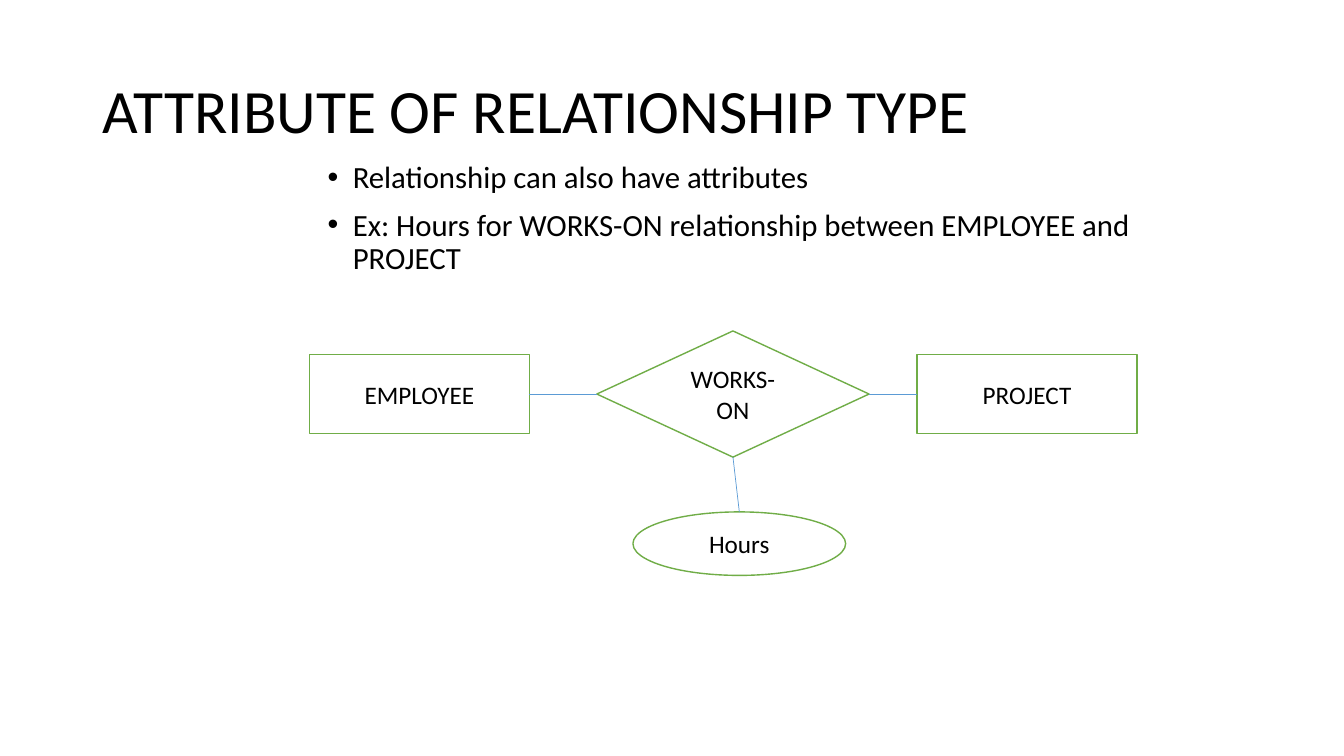
import pptx
import pptx.dml.color
import pptx.enum.shapes
import pptx.enum.text
import pptx.oxml
import pptx.oxml.ns
import pptx.util

Cm = pptx.util.Cm
Pt = pptx.util.Pt
SHAPE = pptx.enum.shapes.MSO_SHAPE
ALIGN = pptx.enum.text.PP_ALIGN
ANCHOR = pptx.enum.text.MSO_ANCHOR
TOP, LEFT, BOTTOM, RIGHT = range(4)


def rgb(value):
    return pptx.dml.color.RGBColor.from_string(value)


def add_bullet(p):
    pPr = p._p.get_or_add_pPr()
    pPr.set("marL", str(Cm(0.635)))
    pPr.set("indent", str(-Cm(0.635)))
    ns = pptx.oxml.ns.nsdecls("a")
    pPr.append(pptx.oxml.parse_xml(f'<a:buFont {ns} typeface="Arial"/>'))
    pPr.append(pptx.oxml.parse_xml(f'<a:buChar {ns} char="•"/>'))


def write(p, text, size=18, color="000000", align=ALIGN.LEFT,
          bullet=False, spacing=None, before=0):
    if bullet:
        add_bullet(p)
    p.alignment = align
    p.line_spacing = spacing
    p.space_before = Pt(before)
    r = p.add_run()
    r.text = text
    r.font.name = "Calibri"
    r.font.size = Pt(size)
    r.font.color.rgb = rgb(color)


def place(sp, left, top, width, height, anchor):
    sp.left, sp.top = Cm(left), Cm(top)
    sp.width, sp.height = Cm(width), Cm(height)
    tf = sp.text_frame
    tf.word_wrap = True
    tf.auto_size = pptx.enum.text.MSO_AUTO_SIZE.NONE
    tf.vertical_anchor = anchor
    return tf


def add_node(s, kind, text, left, top, width, height):
    sp = s.shapes.add_shape(kind, Cm(left), Cm(top), Cm(width), Cm(height))
    sp.shadow.inherit = False
    sp.fill.solid()
    sp.fill.fore_color.rgb = rgb("FFFFFF")
    sp.line.color.rgb = rgb("70AD47")
    sp.line.width = Pt(1)
    tf = sp.text_frame
    tf.word_wrap = True
    tf.vertical_anchor = ANCHOR.MIDDLE
    write(tf.paragraphs[0], text, align=ALIGN.CENTER)
    return sp


def link(s, start, start_site, end, end_site):
    c = s.shapes.add_connector(pptx.enum.shapes.MSO_CONNECTOR.STRAIGHT, 0, 0, 0, 0)
    c.begin_connect(start, start_site)
    c.end_connect(end, end_site)
    c.line.color.rgb = rgb("5B9BD5")
    c.line.width = Pt(0.5)
    ns = pptx.oxml.ns.nsdecls("a")
    c._element.spPr.append(pptx.oxml.parse_xml(f"<a:effectLst {ns}/>"))


def main():
    prs = pptx.Presentation()
    prs.slide_width, prs.slide_height = Cm(33.867), Cm(19.05)
    s = prs.slides.add_slide(prs.slide_layouts[1])

    tf = place(s.shapes.title, 2.33, 1.02, 29.21, 3.68, ANCHOR.MIDDLE)
    write(tf.paragraphs[0], "ATTRIBUTE OF RELATIONSHIP TYPE", size=44, spacing=0.9)

    tf = place(s.placeholders[1], 8, 3.96, 20.83, 13.34, ANCHOR.TOP)
    items = ["Relationship can also have attributes",
             "Ex: Hours for WORKS-ON relationship between EMPLOYEE and PROJECT"]
    for i, text in enumerate(items):
        p = tf.add_paragraph() if i else tf.paragraphs[0]
        write(p, text, size=22, bullet=True, spacing=0.9, before=10 if i else 0)

    employee = add_node(s, SHAPE.RECTANGLE, "EMPLOYEE", 7.8, 8.94, 5.54, 1.98)
    project = add_node(s, SHAPE.RECTANGLE, "PROJECT", 23.11, 8.94, 5.54, 1.98)
    works_on = add_node(s, SHAPE.DIAMOND, "WORKS-ON", 15.04, 8.34, 6.86, 3.18)
    hours = add_node(s, SHAPE.OVAL, "Hours", 15.95, 12.9, 5.36, 1.6)

    link(s, employee, RIGHT, works_on, LEFT)
    link(s, works_on, RIGHT, project, LEFT)
    link(s, works_on, BOTTOM, hours, TOP)

    prs.save("out.pptx")


if __name__ == "__main__":
    main()
